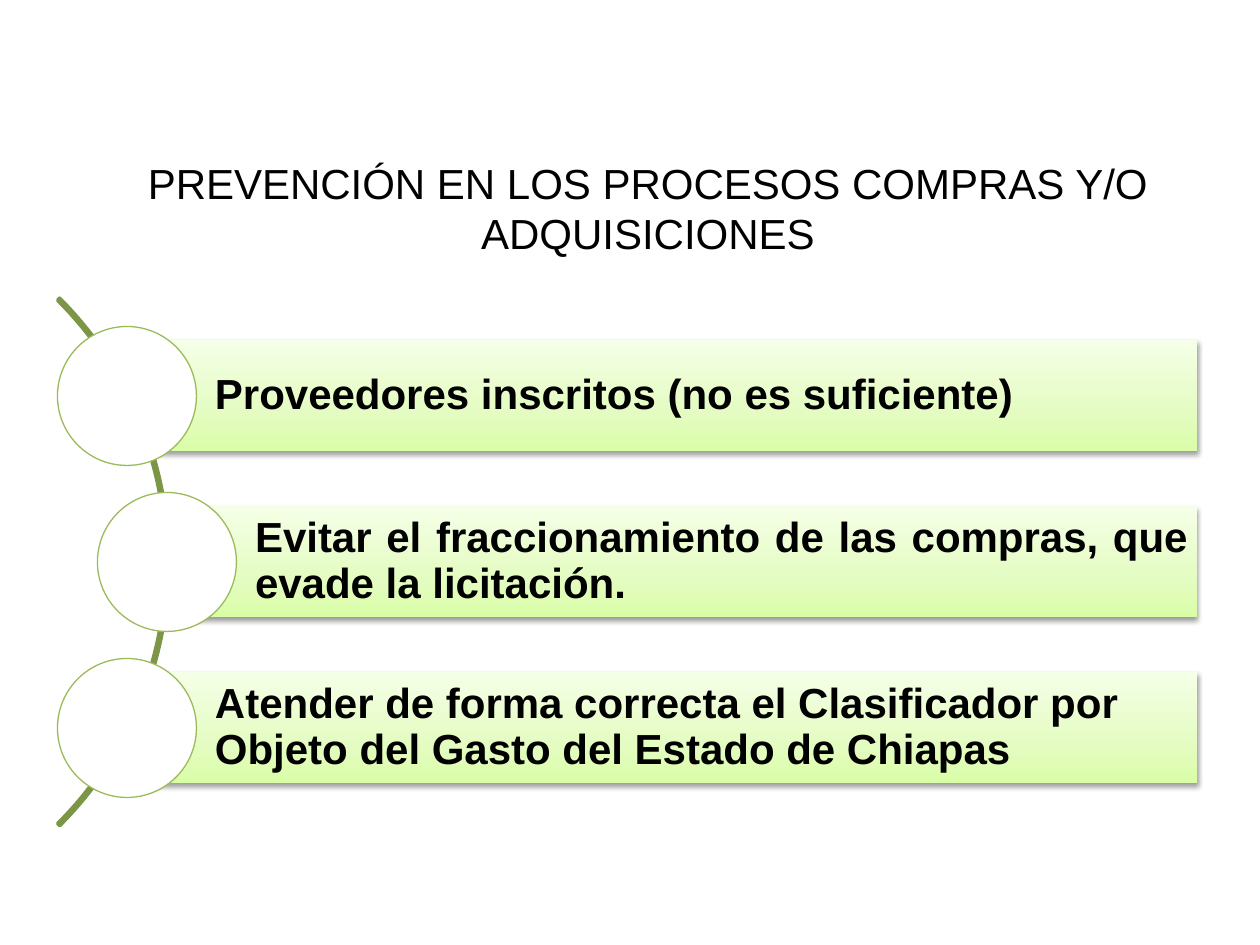
from pptx import Presentation
from pptx.dml.color import RGBColor
from pptx.enum.shapes import MSO_SHAPE as SHAPE
from pptx.enum.text import MSO_ANCHOR as ANCHOR, MSO_AUTO_SIZE as AUTOSIZE, PP_ALIGN as ALIGN
from pptx.oxml import parse_xml
from pptx.oxml.ns import nsdecls, qn
from pptx.util import Emu, Pt

PX = 914400 / 126
RIGHT = 1197
FIRST_Y, PITCH = 396, 166
BAR_H, DIAMETER = 111, 139
GRADIENT = [(0, "DAFDA7"), (35, "E4FCC2"), (100, "F5FFE7")]
ITEMS = [
    (127, "Proveedores inscritos (no es suficiente)", ALIGN.LEFT),
    (167, "Evitar el fraccionamiento de las compras, que evade la licitación.", ALIGN.JUSTIFY),
    (127, "Atender de forma correcta el Clasificador por Objeto del Gasto del Estado de Chiapas",
     ALIGN.LEFT),
]


def px(n):
    return Emu(round(n * PX))


def rgb(color):
    return RGBColor.from_string(color)


def add_shape(slide, kind, x, y, w, h, line=None, width=1):
    sp = slide.shapes.add_shape(kind, px(x), px(y), px(w), px(h))
    sp.shadow.inherit = False
    sp.fill.background()
    if line:
        sp.line.color.rgb = rgb(line)
        sp.line.width = Pt(width)
    else:
        sp.line.fill.background()
    return sp


def set_gradient(sp):
    sp.fill.gradient()
    sp.fill.gradient_angle = 90
    stops = sp._element.spPr.find(".//" + qn("a:gsLst"))
    for stop in list(stops):
        stops.remove(stop)
    for pos, color in GRADIENT:
        stops.append(parse_xml(
            f'<a:gs {nsdecls("a")} pos="{pos * 1000}"><a:srgbClr val="{color}"/></a:gs>'))


def set_shadow(sp):
    effects = sp._element.spPr.find(qn("a:effectLst"))
    effects.append(parse_xml(
        f'<a:outerShdw {nsdecls("a")} blurRad="{Pt(3.1)}" dist="{Pt(1.6)}" dir="5400000"'
        ' rotWithShape="0"><a:srgbClr val="000000"><a:alpha val="38000"/></a:srgbClr>'
        '</a:outerShdw>'))


def write(tf, text, align, bold=False):
    tf.word_wrap = True
    p = tf.paragraphs[0]
    p.alignment = align
    r = p.add_run()
    r.text = text
    r.font.name = "Arial"
    r.font.size = Pt(24)
    r.font.bold = bold
    r.font.color.rgb = rgb("000000")
    return p


def add_title(slide, text):
    title = slide.shapes.title
    title.left, title.top, title.width, title.height = px(102), px(151), px(1092), px(115)
    tf = title.text_frame
    tf.auto_size = AUTOSIZE.NONE
    tf.vertical_anchor = ANCHOR.TOP
    write(tf, text, ALIGN.CENTER)


def add_arc(slide):
    arc = add_shape(slide, SHAPE.BLOCK_ARC, -577, 189, 746, 746, "7C9647", 2)
    for i, value in enumerate((189, 27, 0.004)):
        arc.adjustments[i] = value


def add_bar(slide, x, cy, text, align):
    bar = add_shape(slide, SHAPE.RECTANGLE, x, cy - BAR_H / 2, RIGHT - x, BAR_H)
    set_gradient(bar)
    set_shadow(bar)
    tf = bar.text_frame
    tf.vertical_anchor = ANCHOR.MIDDLE
    tf.margin_left = px(88)
    tf.margin_top = tf.margin_right = tf.margin_bottom = px(9)
    write(tf, text, align, bold=True).line_spacing = 0.9


def add_circle(slide, cx, cy):
    circle = add_shape(slide, SHAPE.OVAL, cx - DIAMETER / 2, cy - DIAMETER / 2,
                       DIAMETER, DIAMETER, "9BBB59", 0.75)
    circle.fill.solid()
    circle.fill.fore_color.rgb = rgb("FFFFFF")


def main():
    prs = Presentation()
    prs.slide_width, prs.slide_height = px(1260), px(945)
    slide = prs.slides.add_slide(prs.slide_layouts[5])
    add_title(slide, "PREVENCIÓN EN LOS PROCESOS COMPRAS Y/O ADQUISICIONES")
    add_arc(slide)
    for i, (x, text, align) in enumerate(ITEMS):
        cy = FIRST_Y + i * PITCH
        add_bar(slide, x, cy, text, align)
        add_circle(slide, x, cy)
    prs.save("out.pptx")


if __name__ == "__main__":
    main()
